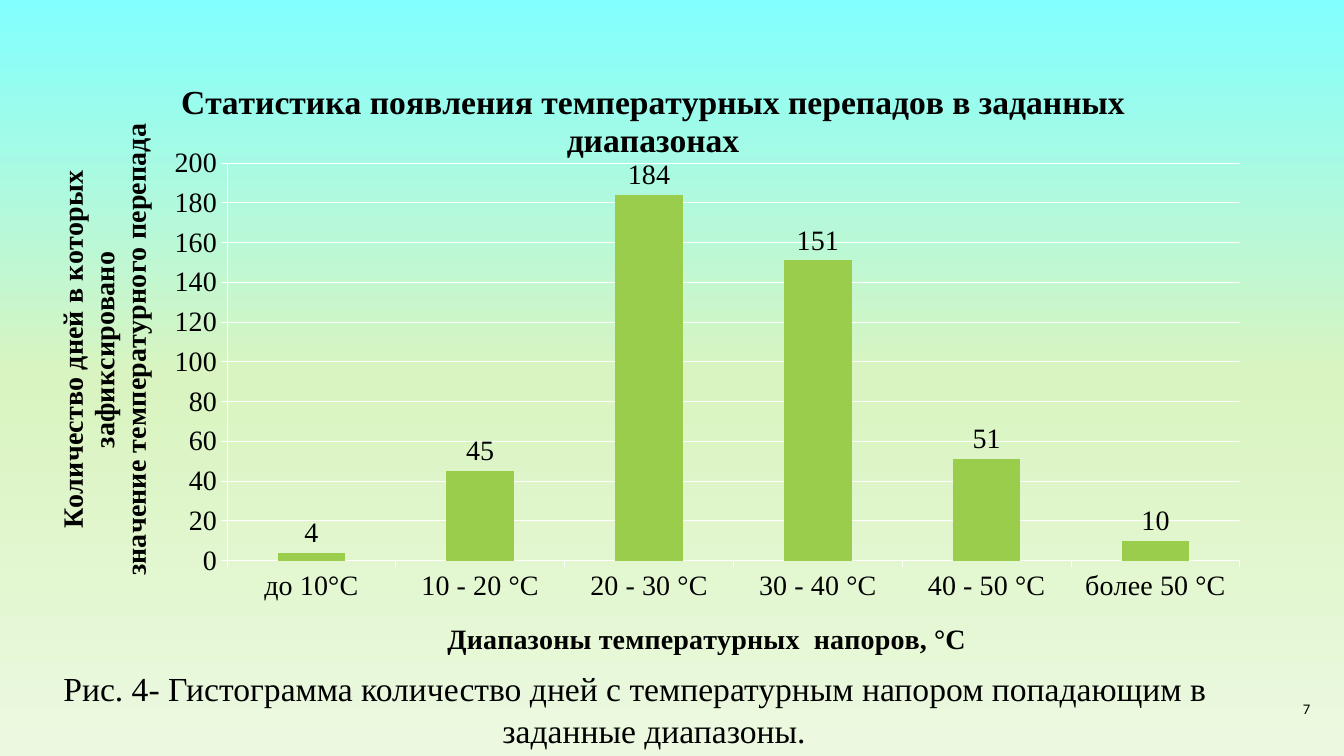
"""Build the slide with the histogram of temperature differences."""
from copy import deepcopy

from lxml import etree
from pptx import Presentation
from pptx.chart.data import CategoryChartData
from pptx.dml.color import RGBColor
from pptx.enum.chart import XL_CHART_TYPE, XL_LABEL_POSITION, XL_TICK_MARK
from pptx.enum.text import MSO_ANCHOR, PP_ALIGN
from pptx.oxml.ns import qn
from pptx.util import Cm, Pt

COLUMNS = XL_CHART_TYPE.COLUMN_CLUSTERED
OUTSIDE_END = XL_LABEL_POSITION.OUTSIDE_END
TICK_OUT = XL_TICK_MARK.OUTSIDE
TOP, MIDDLE = MSO_ANCHOR.TOP, MSO_ANCHOR.MIDDLE
CENTER, RIGHT = PP_ALIGN.CENTER, PP_ALIGN.RIGHT

BLACK = RGBColor(0x00, 0x00, 0x00)
WHITE = RGBColor(0xFF, 0xFF, 0xFF)
GREEN = RGBColor(0x9A, 0xCD, 0x4C)
SKY = RGBColor(0x82, 0xFF, 0xFF)
LIME = RGBColor(0xD9, 0xF4, 0xC0)
PALE = RGBColor(0xEC, 0xF9, 0xE0)

SERIF = "Times New Roman"
SANS = "Calibri"
DAYS_BY_RANGE = {
    "до 10°С": 4,
    "10 - 20 °С": 45,
    "20 - 30 °С": 184,
    "30 - 40 °С": 151,
    "40 - 50 °С": 51,
    "более 50 °С": 10,
}


def set_values(target, values):
    """Set every attribute named in values on target."""
    for name, value in values.items():
        setattr(target, name, value)


def set_font(font, name, size, bold=False):
    """Give a font its typeface, size, weight and black colour."""
    set_values(font, {"name": name, "size": Pt(size), "bold": bold})
    font.color.rgb = BLACK


def paint_background(slide):
    """Fill the slide with a vertical three-colour gradient."""
    fill = slide.background.fill
    fill.gradient()
    fill.gradient_angle = 270
    stop_list = slide.element.find(".//" + qn("a:gsLst"))
    stop_list.insert(1, deepcopy(stop_list[0]))
    for stop, color, position in zip(fill.gradient_stops, (SKY, LIME, PALE), (0, 0.5, 1)):
        stop.color.rgb = color
        stop.position = position


def add_text(slide, place, text, font, anchor, paragraph_format):
    """Add a one-paragraph text box and return its paragraph."""
    frame = slide.shapes.add_textbox(*map(Cm, place)).text_frame
    set_values(frame, {"word_wrap": True, "vertical_anchor": anchor})
    paragraph = frame.paragraphs[0]
    paragraph.text = text
    set_values(paragraph, paragraph_format)
    set_font(paragraph.runs[0].font, *font)
    return paragraph


def set_layout(element, index, percents, target=None):
    """Place a chart part by percentages of the chart area."""
    for old_layout in element.findall(qn("c:layout")):
        element.remove(old_layout)
    layout = etree.Element(qn("c:layout"))
    manual = etree.SubElement(layout, qn("c:manualLayout"))
    values = {"layoutTarget": target} if target else {}
    values.update(xMode="edge", yMode="edge")
    values.update((side, percent / 100) for side, percent in percents.items())
    for name, value in values.items():
        etree.SubElement(manual, qn("c:" + name)).set("val", str(value))
    element.insert(index, layout)


def add_title(owner, lines, size, x, y):
    """Write a bold title on a chart or an axis at a fixed place."""
    owner.has_title = True
    title = owner.chart_title if hasattr(owner, "chart_title") else owner.axis_title
    frame = title.text_frame
    frame.text = "\n".join(lines)
    for paragraph in frame.paragraphs:
        set_font(paragraph.font, SERIF, size, True)
        set_font(paragraph.runs[0].font, SERIF, size, True)
    set_layout(title._element, 1, {"x": x, "y": y})


def format_axis(axis, values):
    """Give an axis its white line, outer ticks and other values."""
    set_values(axis, {"major_tick_mark": TICK_OUT, **values})
    set_font(axis.tick_labels.font, SERIF, 20)
    axis.format.line.color.rgb = WHITE
    if axis.has_major_gridlines:
        axis.major_gridlines.format.line.color.rgb = WHITE


def add_histogram(slide):
    """Add the column chart of days per temperature range."""
    data = CategoryChartData()
    data.categories = list(DAYS_BY_RANGE)
    data.add_series("Series 1", list(DAYS_BY_RANGE.values()))
    place = map(Cm, (0.86, 1.4, 31.17, 15.34))
    chart = slide.shapes.add_chart(COLUMNS, *place, data).chart
    chart.has_legend = False
    set_font(chart.font, SERIF, 20)

    format_axis(chart.category_axis, {"has_major_gridlines": False})
    format_axis(chart.value_axis, {"has_major_gridlines": True, "minimum_scale": 0,
                                   "maximum_scale": 200, "major_unit": 20})
    set_values(chart.value_axis.tick_labels,
               {"number_format": "#,##0", "number_format_is_linked": False})

    add_title(chart, ["Статистика появления температурных перепадов в заданных диапазонах"],
              24, 11.4, 3)
    add_title(chart.category_axis, ["Диапазоны температурных  напоров, °С"], 20, 33, 92.2)
    add_title(chart.value_axis, ["Количество дней в которых зафиксировано",
                                 "значение температурного перепада"], 20, 1.5, 10.8)

    plot = chart.plots[0]
    set_values(plot, {"gap_width": 150, "vary_by_categories": False, "has_data_labels": True})
    set_values(plot.data_labels, {"show_value": True, "position": OUTSIDE_END})
    set_font(plot.data_labels.font, SERIF, 20)
    columns = plot.series[0].format.fill
    columns.solid()
    columns.fore_color.rgb = GREEN
    set_layout(chart.element.find(".//" + qn("c:plotArea")), 0,
               {"x": 15.6, "y": 17.7, "w": 81.9, "h": 65.4}, "inner")


def main():
    """Build and save the slide."""
    deck = Presentation()
    set_values(deck, {"slide_width": Cm(33.87), "slide_height": Cm(19.05)})
    slide = deck.slides.add_slide(deck.slide_layouts[6])
    paint_background(slide)
    add_text(slide, (31.14, 17.35, 2.13, 1.02), "7", (SANS, 10.5), MIDDLE,
             {"alignment": RIGHT})
    caption = add_text(
        slide, (0.86, 16.66, 30.28, 2.31),
        "Рис. 4- Гистограмма количество дней с температурным напором "
        "попадающим в заданные диапазоны.",
        (SERIF, 24), TOP, {"alignment": CENTER, "line_spacing": 1.05})
    hanging = Cm(0.97)
    for name, value in {"marL": hanging, "indent": -hanging}.items():
        caption._p.get_or_add_pPr().set(name, str(int(value)))
    add_histogram(slide)
    deck.save("out.pptx")


if __name__ == "__main__":
    main()
